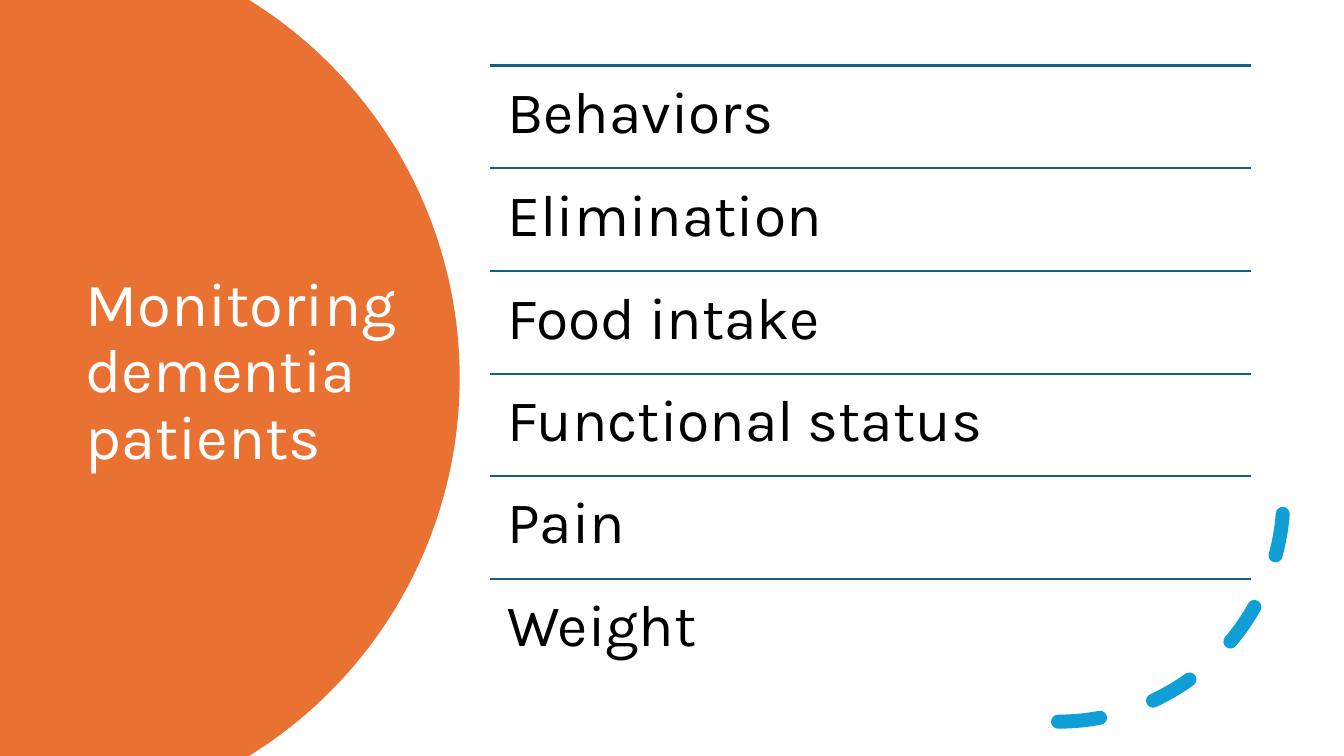
import math
from dataclasses import dataclass

import pptx
import pptx.dml.color
import pptx.enum.dml
import pptx.enum.shapes
import pptx.enum.text
import pptx.oxml.ns
import pptx.oxml.xmlchemy
import pptx.util
from lxml import etree

EMU_PER_PX = 9144
SLIDE_W, SLIDE_H = 1333, 750
ORANGE, BLUE, TEAL = "E97132", "0F9ED5", "156082"
WHITE, BLACK = "FFFFFF", "000000"
PANEL_CENTER_X, PANEL_RADIUS, PANEL_STEPS = 15, 441, 90
LIST_LEFT, LIST_TOP, LIST_W, LIST_H = 486, 65, 755, 611
TOPICS = ["Behaviors", "Elimination", "Food intake", "Functional status", "Pain", "Weight"]


@dataclass
class Label:
    text: str
    left: int
    top: int
    width: int
    height: int
    size: int
    color: str
    inset_x: int
    inset_y: int
    anchor: pptx.enum.text.MSO_ANCHOR


def px(n: int) -> int:
    return n * EMU_PER_PX


def rgb(color: str) -> pptx.dml.color.RGBColor:
    return pptx.dml.color.RGBColor.from_string(color)


def set_all(obj, values: dict) -> None:
    for name, value in values.items():
        setattr(obj, name, value)


def add_label(slide, label: Label) -> None:
    s = slide.shapes.add_textbox(px(label.left), px(label.top), px(label.width), px(label.height))
    tf = s.text_frame
    set_all(tf, {
        "word_wrap": True,
        "vertical_anchor": label.anchor,
        "margin_left": px(label.inset_x),
        "margin_right": px(label.inset_x),
        "margin_top": px(label.inset_y),
        "margin_bottom": px(label.inset_y),
    })
    p = tf.paragraphs[0]
    p.line_spacing = 0.9
    r = p.add_run()
    r.text = label.text
    set_all(r.font, {"name": "Karla", "size": pptx.util.Pt(label.size)})
    r.font.color.rgb = rgb(label.color)


def add_rule(slide, top: int) -> None:
    s = slide.shapes.add_connector(
        pptx.enum.shapes.MSO_CONNECTOR.STRAIGHT,
        px(LIST_LEFT), px(top), px(LIST_LEFT + LIST_W), px(top))
    s.line.color.rgb = rgb(TEAL)
    s.line.width = pptx.util.Pt(1.5)
    etree.SubElement(s._element.spPr, pptx.oxml.ns.qn("a:effectLst"))


def add_panel(slide) -> None:
    middle = SLIDE_H / 2
    half_angle = math.asin(middle / PANEL_RADIUS)
    angles = [half_angle * (2 * i / PANEL_STEPS - 1) for i in range(PANEL_STEPS + 1)]
    curve = [(px(PANEL_CENTER_X + PANEL_RADIUS * math.cos(a)),
              px(middle + PANEL_RADIUS * math.sin(a))) for a in angles]
    builder = slide.shapes.build_freeform(0, 0)
    builder.add_line_segments(curve + [(0, px(SLIDE_H))], close=True)
    s = builder.convert_to_shape()
    s.shadow.inherit = False
    s.fill.solid()
    s.fill.fore_color.rgb = rgb(ORANGE)
    s.line.fill.background()


def add_dashed_arc(slide) -> None:
    s = slide.shapes.add_shape(
        pptx.enum.shapes.MSO_SHAPE.ARC, px(826), px(269), px(447), px(447))
    s.shadow.inherit = False
    s.fill.background()
    s.line.color.rgb = rgb(BLUE)
    set_all(s.line, {
        "width": pptx.util.Pt(10),
        "dash_style": pptx.enum.dml.MSO_LINE.DASH,
    })
    sp = s._element.spPr
    sp.find(pptx.oxml.ns.qn("a:xfrm")).set("flipV", "1")
    sp.find(pptx.oxml.ns.qn("a:ln")).set("cap", "rnd")


def main() -> None:
    prs = pptx.Presentation()
    set_all(prs, {"slide_width": px(SLIDE_W), "slide_height": px(SLIDE_H)})
    slide = prs.slides.add_slide(prs.slide_layouts[6])
    anchors = pptx.enum.text.MSO_ANCHOR

    add_panel(slide)
    add_label(slide, Label("Monitoring dementia patients", 75, 126, 350, 488,
                           44, WHITE, 10, 5, anchors.MIDDLE))
    add_dashed_arc(slide)
    row_h = round(LIST_H / len(TOPICS))
    for i, topic in enumerate(TOPICS):
        top = LIST_TOP + round(i * LIST_H / len(TOPICS))
        add_rule(slide, top)
        add_label(slide, Label(topic, LIST_LEFT, top, LIST_W, row_h,
                               42, BLACK, 17, 17, anchors.TOP))
    prs.save("out.pptx")


if __name__ == "__main__":
    main()
